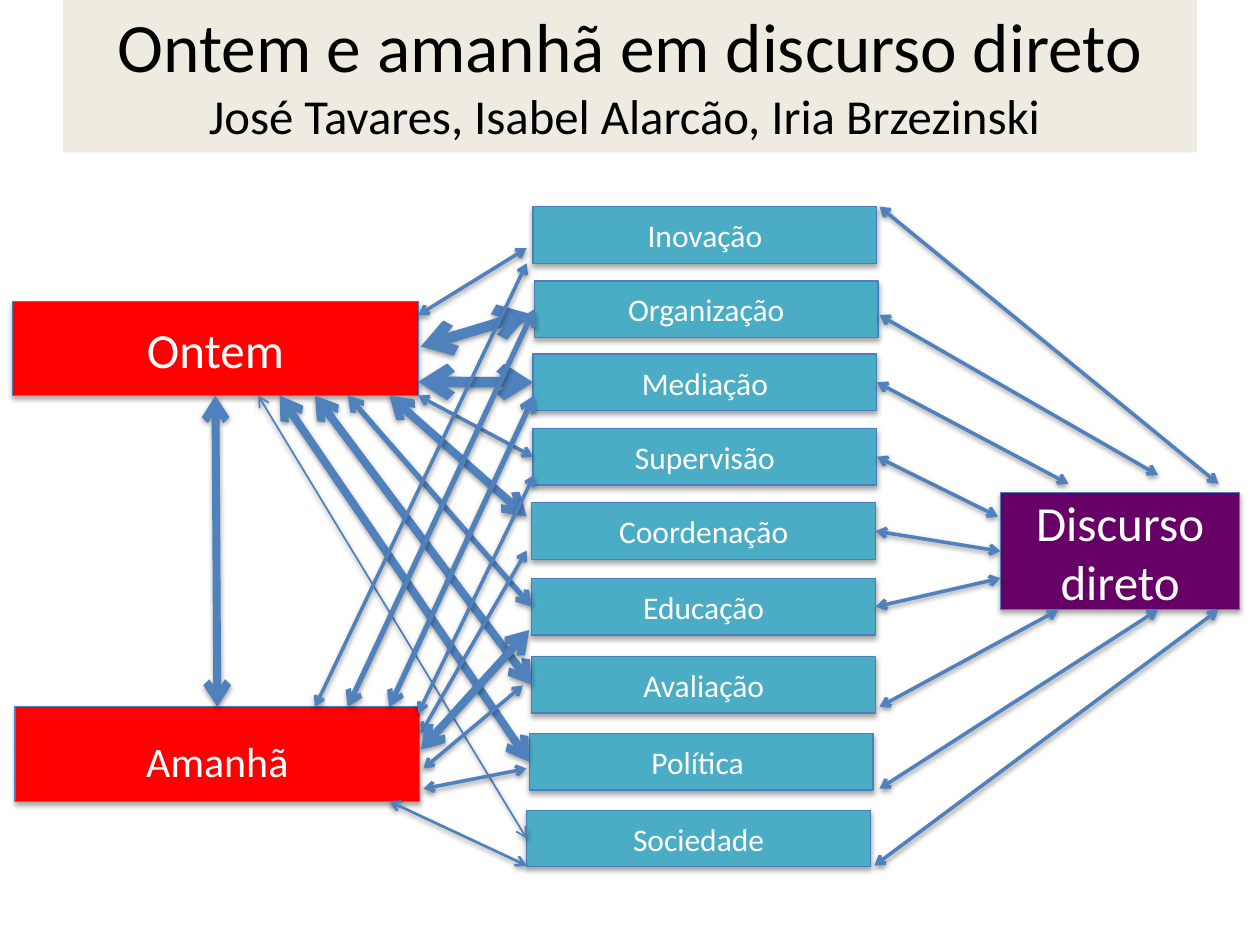
import dataclasses

import pptx
import pptx.dml.color
import pptx.enum.shapes
import pptx.enum.text
import pptx.oxml.ns
import pptx.util
from lxml import etree

Inches = pptx.util.Inches
Pt = pptx.util.Pt
qn = pptx.oxml.ns.qn


@dataclasses.dataclass(frozen=True)
class Theme:
    font: str = "Calibri"
    black: str = "000000"
    white: str = "FFFFFF"
    cream: str = "EEECE1"
    red: str = "FF0000"
    purple: str = "660066"
    teal: str = "4BACC6"
    edge: str = "4B7EBC"
    arrow: str = "4F81BD"
    title: float = 39.6
    authors: float = 27.9
    large: int = 28
    medium: int = 24
    small: int = 18


THEME = Theme()

# name, left, top
TOPICS = [
    ("Inovação", 4.23, 1.64),
    ("Organização", 4.24, 2.23),
    ("Mediação", 4.23, 2.81),
    ("Supervisão", 4.23, 3.4),
    ("Coordenação", 4.22, 3.99),
    ("Educação", 4.22, 4.59),
    ("Avaliação", 4.22, 5.21),
    ("Política ", 4.2, 5.82),
    ("Sociedade", 4.18, 6.43),
]

# start x, start y, end x, end y, width in points
SPEECH = [
    (6.98, 1.64, 9.67, 3.84, 2),
    (6.98, 2.5, 9.19, 3.77, 2),
    (6.96, 3.03, 8.48, 3.84, 2),
    (6.96, 3.62, 7.92, 4.1, 2),
    (6.94, 4.21, 7.94, 4.37, 2),
    (6.94, 4.81, 7.94, 4.59, 2),
    (6.98, 5.61, 8.4, 4.84, 2),
    (6.98, 6.26, 9.19, 4.84, 2),
    (6.94, 6.87, 9.67, 4.84, 2),
]
PAST = [
    (3.32, 2.5, 4.18, 1.97, 2),
    (3.34, 2.75, 4.2, 2.49, 6),
    (3.32, 3.03, 4.23, 3.03, 6),
    (3.32, 3.14, 4.23, 3.62, 2),
    (3.09, 3.14, 4.18, 4.1, 4.5),
    (2.76, 3.14, 4.22, 4.81, 3),
    (2.5, 3.14, 4.22, 5.43, 4.5),
    (2.22, 3.14, 4.2, 6.04, 4.5),
    (2.05, 3.14, 4.18, 6.65, 1),
]
FUTURE = [
    (2.5, 5.61, 4.18, 2.09, 2),
    (2.76, 5.61, 4.24, 2.45, 3),
    (3.09, 5.61, 4.24, 3.14, 3),
    (3.32, 5.66, 4.24, 3.77, 2),
    (3.34, 5.82, 4.18, 4.37, 2),
    (3.34, 5.95, 4.2, 5, 4.5),
    (3.36, 6.1, 4.15, 5.44, 2),
    (3.36, 6.26, 4.18, 6.1, 2),
    (3.09, 6.36, 4.18, 6.87, 1.5),
]
SPAN = (1.71, 3.14, 1.72, 5.61, 4.5)


def paint(fill, color):
    fill.solid()
    fill.fore_color.rgb = pptx.dml.color.RGBColor.from_string(color)


def style(run, size, color):
    run.font.name = THEME.font
    run.font.size = Pt(size)
    paint(run.font.fill, color)


def shade(shape, dist, alpha):
    """Give the shape its own soft shadow, cast straight down."""
    props = shape._element.spPr
    effects = etree.SubElement(props, qn("a:effectLst"))
    cast = etree.SubElement(
        effects, qn("a:outerShdw"), blurRad=str(Pt(3.1)),
        dist=str(Pt(dist)), dir="5400000", rotWithShape="0")
    color = etree.SubElement(cast, qn("a:srgbClr"), val=THEME.black)
    etree.SubElement(color, qn("a:alpha"), val=str(alpha * 1000))


def add_title(slide):
    title = slide.shapes.title
    title.left, title.top = Inches(0.5), Inches(-0.04)
    title.width, title.height = Inches(9), Inches(1.25)
    paint(title.fill, THEME.cream)
    frame = title.text_frame
    frame.text = ("Ontem e amanhã em discurso direto\v"
                  "José Tavares, Isabel Alarcão, Iria Brzezinski ")
    frame.auto_size = pptx.enum.text.MSO_AUTO_SIZE.NONE
    frame.vertical_anchor = pptx.enum.text.MSO_ANCHOR.MIDDLE
    para = frame.paragraphs[0]
    para.alignment = pptx.enum.text.PP_ALIGN.CENTER
    for run, size in zip(para.runs, (THEME.title, THEME.authors)):
        style(run, size, THEME.black)


def add_box(slide, text, left, top, width, height, fill, size):
    box = slide.shapes.add_shape(
        pptx.enum.shapes.MSO_SHAPE.RECTANGLE,
        Inches(left), Inches(top), Inches(width), Inches(height))
    paint(box.fill, fill)
    paint(box.line.fill, THEME.edge)
    box.line.width = Pt(0.75)
    shade(box, 1.8, 35)
    frame = box.text_frame
    frame.text = text
    frame.word_wrap = True
    frame.vertical_anchor = pptx.enum.text.MSO_ANCHOR.MIDDLE
    para = frame.paragraphs[0]
    para.alignment = pptx.enum.text.PP_ALIGN.CENTER
    style(para.runs[0], size, THEME.white)
    return box


def dock(join, x, y, boxes):
    """Join a line end to the box whose side has its middle at that point."""
    near = Inches(0.015)
    for box in boxes:
        mid_x = box.left + box.width / 2
        mid_y = box.top + box.height / 2
        sides = [(mid_x, box.top), (box.left, mid_y),
                 (mid_x, box.top + box.height), (box.left + box.width, mid_y)]
        for site, (side_x, side_y) in enumerate(sides):
            if abs(side_x - x) < near and abs(side_y - y) < near:
                join(box, site)
                return


def add_arrow(slide, boxes, x1, y1, x2, y2, width):
    ends = [Inches(n) for n in (x1, y1, x2, y2)]
    arrow = slide.shapes.add_connector(
        pptx.enum.shapes.MSO_CONNECTOR.STRAIGHT, *ends)
    paint(arrow.line.fill, THEME.arrow)
    arrow.line.width = Pt(width)
    for tip in ("a:headEnd", "a:tailEnd"):
        etree.SubElement(arrow.line._get_or_add_ln(), qn(tip), type="arrow")
    shade(arrow, 1.6, 38)
    dock(arrow.begin_connect, *ends[:2], boxes)
    dock(arrow.end_connect, *ends[2:], boxes)


def main():
    deck = pptx.Presentation()
    deck.slide_width, deck.slide_height = Inches(10), Inches(7.5)
    slide = deck.slides.add_slide(deck.slide_layouts[5])
    add_title(slide)

    past = add_box(slide, "Ontem", 0.1, 2.39, 3.22, 0.75,
                   THEME.red, THEME.large)
    future = add_box(slide, "Amanhã", 0.12, 5.61, 3.21, 0.75,
                     THEME.red, THEME.medium)
    future.text_frame.margin_top = Inches(0.15)
    speech = add_box(slide, "Discurso direto", 7.94, 3.91, 1.9, 0.93,
                     THEME.purple, THEME.large)
    boxes = [past, future, speech]
    for name, left, top in TOPICS:
        boxes.append(add_box(slide, name, left, top, 2.73, 0.45,
                             THEME.teal, THEME.small))

    for link in [SPAN, *SPEECH, *PAST, *FUTURE]:
        add_arrow(slide, boxes, *link)
    deck.save("out.pptx")


if __name__ == "__main__":
    main()
